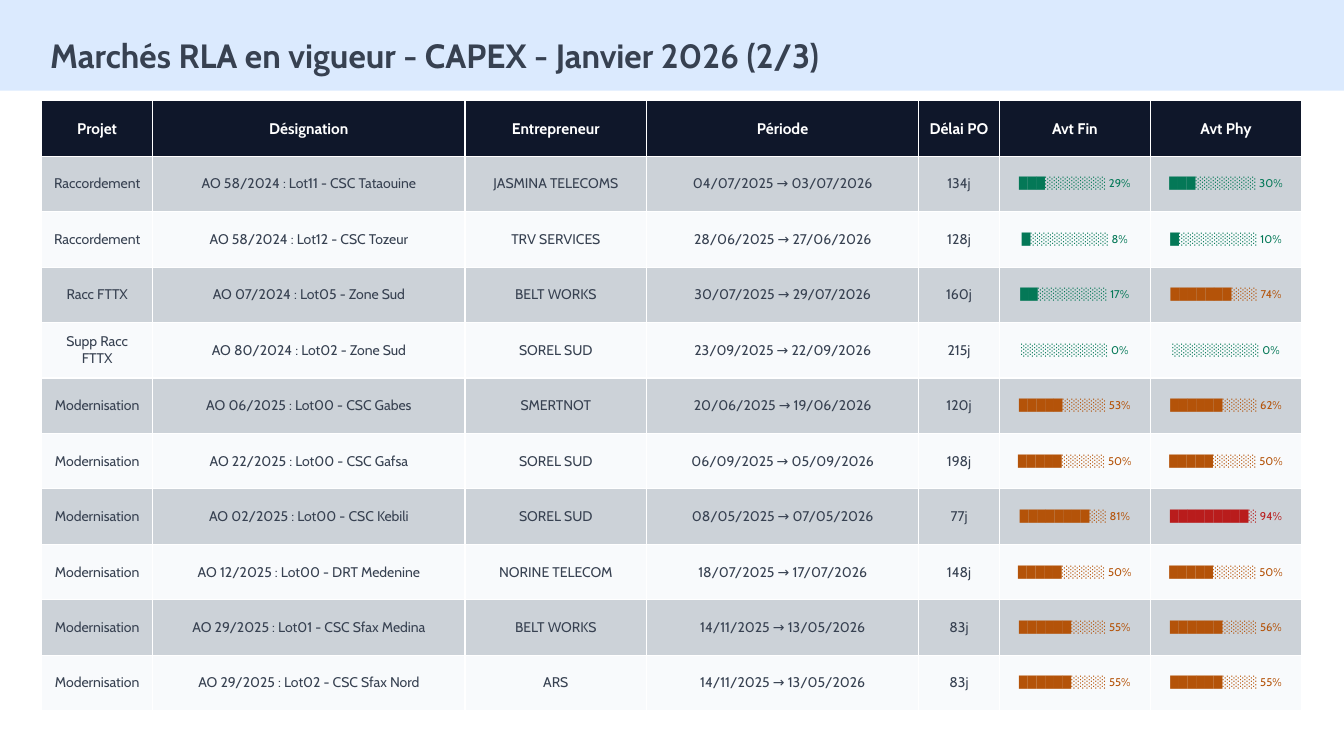
from pptx import Presentation
from pptx.dml.color import RGBColor
from pptx.enum.shapes import MSO_SHAPE
from pptx.enum.text import MSO_ANCHOR, MSO_AUTO_SIZE, PP_ALIGN
from pptx.util import Pt

COLORS = {
    "band": "DBEAFE", "ink": "374151", "head": "0F172A", "white": "FFFFFF",
    "odd": "CCD2D8", "even": "F8FAFC",
    "low": "047857", "mid": "B45309", "high": "B91C1C",
}
WIDTHS = [79.2, 223.2, 129.6, 194.4, 57.6, 108, 108]
ROW = 39.6
HEADS = ["Projet", "Désignation", "Entrepreneur", "Période", "Délai PO", "Avt Fin", "Avt Phy"]
DEALS = [
    ("Raccordement", "AO 58/2024 : Lot11 - CSC Tataouine", "JASMINA TELECOMS",
     "04/07/2025 → 03/07/2026", "134j", 29, 30),
    ("Raccordement", "AO 58/2024 : Lot12 - CSC Tozeur", "TRV SERVICES",
     "28/06/2025 → 27/06/2026", "128j", 8, 10),
    ("Racc FTTX", "AO 07/2024 : Lot05 - Zone Sud", "BELT WORKS",
     "30/07/2025 → 29/07/2026", "160j", 17, 74),
    ("Supp Racc FTTX", "AO 80/2024 : Lot02 - Zone Sud", "SOREL SUD",
     "23/09/2025 → 22/09/2026", "215j", 0, 0),
    ("Modernisation", "AO 06/2025 : Lot00 - CSC Gabes", "SMERTNOT",
     "20/06/2025 → 19/06/2026", "120j", 53, 62),
    ("Modernisation", "AO 22/2025 : Lot00 - CSC Gafsa", "SOREL SUD",
     "06/09/2025 → 05/09/2026", "198j", 50, 50),
    ("Modernisation", "AO 02/2025 : Lot00 - CSC Kebili", "SOREL SUD",
     "08/05/2025 → 07/05/2026", "77j", 81, 94),
    ("Modernisation", "AO 12/2025 : Lot00 - DRT Medenine", "NORINE TELECOM",
     "18/07/2025 → 17/07/2026", "148j", 50, 50),
    ("Modernisation", "AO 29/2025 : Lot01 - CSC Sfax Medina", "BELT WORKS",
     "14/11/2025 → 13/05/2026", "83j", 55, 56),
    ("Modernisation", "AO 29/2025 : Lot02 - CSC Sfax Nord", "ARS",
     "14/11/2025 → 13/05/2026", "83j", 55, 55),
]


class Deck:
    def __init__(self, slide, face):
        self.slide = slide
        self.face = face

    def paint(self, fill, color):
        fill.solid()
        fill.fore_color.rgb = RGBColor.from_string(COLORS[color])

    def label(self, frame, text, size, color, bold=False, align=None):
        para = frame.paragraphs[0]
        para.text = text
        para.alignment = align
        font = para.font
        font.name, font.size, font.bold = self.face, Pt(size), bold
        font.color.rgb = RGBColor.from_string(COLORS[color])

    def rect(self, x, y, w, h, color):
        shape = self.slide.shapes.add_shape(MSO_SHAPE.RECTANGLE, Pt(x), Pt(y), Pt(w), Pt(h))
        shape.shadow.inherit = False
        self.paint(shape.fill, color)
        shape.line.fill.background()

    def title(self, x, y, w, h, text):
        frame = self.slide.shapes.add_textbox(Pt(x), Pt(y), Pt(w), Pt(h)).text_frame
        frame.word_wrap = False
        frame.auto_size = MSO_AUTO_SIZE.SHAPE_TO_FIT_TEXT
        self.label(frame, text, 24, "ink", True)

    def cell(self, cell, text, fill, size, color, bold=False):
        self.paint(cell.fill, fill)
        cell.vertical_anchor = MSO_ANCHOR.MIDDLE
        self.label(cell.text_frame, text, size, color, bold, PP_ALIGN.CENTER)

    def gauge(self, cell, value, fill):
        full = (value + 5) // 10
        color = "low" if value < 50 else "mid" if value < 90 else "high"
        self.cell(cell, f"{'█' * full}{'░' * (10 - full)} {value}%", fill, 8, color)

    def table(self, x, y, heads, rows):
        count = len(rows) + 1
        table = self.slide.shapes.add_table(
            count, len(heads), Pt(x), Pt(y), Pt(sum(WIDTHS)), Pt(ROW * count)).table
        for col, width in zip(table.columns, WIDTHS):
            col.width = Pt(width)
        for row in table.rows:
            row.height = Pt(ROW)
        for c, head in enumerate(heads):
            self.cell(table.cell(0, c), head, "head", 11, "white", True)
        for r, row in enumerate(rows, 1):
            fill = "odd" if r % 2 else "even"
            for c, value in enumerate(row):
                if isinstance(value, int):
                    self.gauge(table.cell(r, c), value, fill)
                else:
                    self.cell(table.cell(r, c), value, fill, 10, "ink")


def main():
    show = Presentation()
    show.slide_width, show.slide_height = Pt(960), Pt(540)
    deck = Deck(show.slides.add_slide(show.slide_layouts[6]), "Cabin")
    deck.rect(0, 0, 960, 64.8, "band")
    deck.title(28.8, 21.6, 864, 43.2, "Marchés RLA en vigueur - CAPEX - Janvier 2026 (2/3)")
    deck.table(29.8, 72, HEADS, DEALS)
    show.save("out.pptx")


if __name__ == "__main__":
    main()
